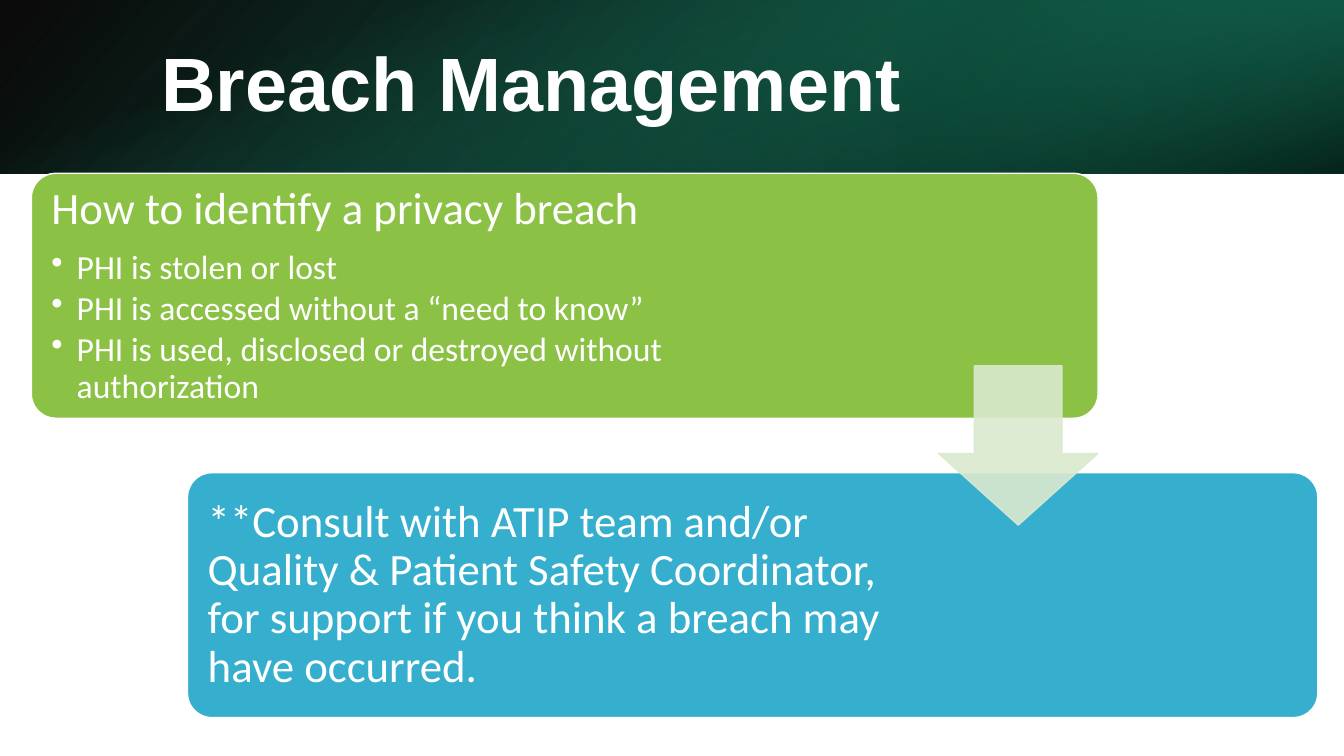
import pptx
import pptx.util
import pptx.dml.color
import pptx.enum.shapes
import pptx.enum.text
import pptx.oxml
import pptx.oxml.ns

Pt = pptx.util.Pt
RGB = pptx.dml.color.RGBColor
KINDS = pptx.enum.shapes.MSO_SHAPE
WHITE = RGB(0xFF, 0xFF, 0xFF)
BLACK = RGB(0x00, 0x00, 0x00)
PINE = RGB(0x16, 0x74, 0x5A)
DEEP = RGB(0x0E, 0x4D, 0x3C)
JADE = RGB(0x1D, 0x9A, 0x78)
GREEN = RGB(0x8B, 0xC1, 0x45)
BLUE = RGB(0x36, 0xAF, 0xCE)
PALE = RGB(0xDA, 0xE9, 0xCF)

BAND = 22.93   # height of the header
BOX = 32.4     # height of each step
PAD_X, PAD_Y = 0.53, 0.93


def make(tag, **attrs):
    node = pptx.oxml.parse_xml(
        f'<a:{tag} xmlns:a="http://schemas.openxmlformats.org/drawingml/2006/main"/>')
    for name, value in attrs.items():
        node.set(name, str(value))
    return node


def fade(node, share):
    """Give every colour inside node an opacity in percent."""
    for color in node.iter(pptx.oxml.ns.qn("a:srgbClr")):
        color.append(make("alpha", val=share * 1000))


class Page:
    """One slide; all places and sizes are percent of its width or height."""
    head_font, body_font = "Arial", "Calibri"
    head_size, lead_size, item_size = 54, 32, 24

    def __init__(self):
        self.deck = pptx.Presentation()
        self.deck.slide_width = pptx.util.Inches(13.33)
        self.deck.slide_height = pptx.util.Inches(7.5)
        self.slide = self.deck.slides.add_slide(self.deck.slide_layouts[5])
        self.shapes = self.slide.shapes

    def place(self, left, top, width, height):
        wide, high = self.deck.slide_width, self.deck.slide_height
        return [round(share * side / 100) for share, side in
                zip((left, top, width, height), (wide, high, wide, high))]

    def shape(self, kind, spot, fill=None, line=None, adjust=()):
        shape = self.shapes.add_shape(kind, *self.place(*spot))
        shape.shadow.inherit = False
        for index, value in enumerate(adjust):
            shape.adjustments[index] = value
        if fill is not None:
            shape.fill.solid()
            shape.fill.fore_color.rgb = fill
        if line is None:
            shape.line.fill.background()
        else:
            shape.line.color.rgb = line
            shape.line.width = Pt(1)
        return shape

    def band(self, spot, stops, angle, turn=0, flip=False):
        """Gradient bar; stops are (position, colour, opacity) in percent."""
        bar = self.shape(KINDS.RECTANGLE, spot)
        if turn == 90:  # swap the sides about the centre so the bar still fills spot
            shift = (bar.width - bar.height) // 2
            bar.left, bar.top = bar.left + shift, bar.top - shift
            bar.width, bar.height = bar.height, bar.width
        bar.rotation = turn
        props = bar._element.spPr
        if flip:
            props.xfrm.set("flipH", "1")
        grad = make("gradFill", rotWithShape=1)
        chain = make("gsLst")
        for pos, color, share in stops:
            stop = make("gs", pos=pos * 1000)
            stop.append(make("srgbClr", val=color))
            fade(stop, share)
            chain.append(stop)
        grad.append(chain)
        grad.append(make("lin", ang=angle * 60000, scaled=0))
        props.find(pptx.oxml.ns.qn("a:prstGeom")).addnext(grad)

    def style(self, para, name, size, bold=False):
        para.alignment = pptx.enum.text.PP_ALIGN.LEFT
        para.line_spacing = 0.9
        para.font.name = name
        para.font.size = Pt(size)
        para.font.bold = bold
        para.font.color.rgb = WHITE

    def title(self, spot, words):
        """Fill the title and lift it above what is drawn so far."""
        title = self.shapes.title
        title.left, title.top, title.width, title.height = self.place(*spot)
        frame = title.text_frame
        frame.text = words
        frame.vertical_anchor = pptx.enum.text.MSO_ANCHOR.MIDDLE
        self.style(frame.paragraphs[0], self.head_font, self.head_size, True)
        self.shapes._spTree.append(title._element)

    def step(self, left, top, width, span, fill, lead, items=()):
        """Rounded box with a lead line and bullets; span is the text width."""
        self.shape(KINDS.ROUNDED_RECTANGLE, (left, top, width, BOX),
                   fill, WHITE, [0.1])
        spot = left + PAD_X, top + PAD_Y, span, BOX - 2 * PAD_Y
        frame = self.shapes.add_textbox(*self.place(*spot)).text_frame
        frame.word_wrap = True
        frame.vertical_anchor = pptx.enum.text.MSO_ANCHOR.MIDDLE
        inset = pptx.util.Inches(0.13)
        frame.margin_left = frame.margin_right = inset
        frame.margin_top = frame.margin_bottom = inset
        para = frame.paragraphs[0]
        para.text = lead
        para.space_after = Pt(0.35 * self.lead_size)
        self.style(para, self.body_font, self.lead_size)
        for item in items:
            para = frame.add_paragraph()
            para.text = item
            para.level = 1
            props = para._p.get_or_add_pPr()
            indent = pptx.util.Inches(0.25)
            props.set("marL", str(indent))
            props.set("indent", str(-indent))
            props.append(make("buChar", char="•"))
            para.space_after = Pt(0.15 * self.item_size)
            self.style(para, self.body_font, self.item_size)

    def arrow(self, spot):
        arrow = self.shape(KINDS.DOWN_ARROW, spot, PALE, PALE, [0.55, 0.45])
        fade(arrow._element.spPr, 90)


def main():
    page = Page()
    full = 0, 0, 100, BAND
    page.band(full, [(0, BLACK, 96), (100, PINE, 100)], 140, flip=True)
    page.band((66.67, 0, 33.33, BAND), [(19, DEEP, 68), (100, JADE, 79)],
              320, turn=180, flip=True)
    page.band(full, [(23, JADE, 0), (99, BLACK, 74)], 340, turn=90)
    page.title((11.25, 5.07, 82.37, 12.8), "Breach Management")
    page.step(2.33, BAND, 79.37, 60.54, GREEN, "How to identify a privacy breach", [
        "PHI is stolen or lost",
        "PHI is accessed without a “need to know”",
        "PHI is used, disclosed or destroyed without authorization",
    ])
    page.step(13.95, 62.53, 84.1, 55.66, BLUE,
              "**Consult with ATIP team and/or Quality & Patient Safety Coordinator, "
              "for support if you think a breach may have occurred.")
    page.arrow((69.84, 48.4, 11.85, 21.07))
    page.deck.save("out.pptx")


if __name__ == "__main__":
    main()
